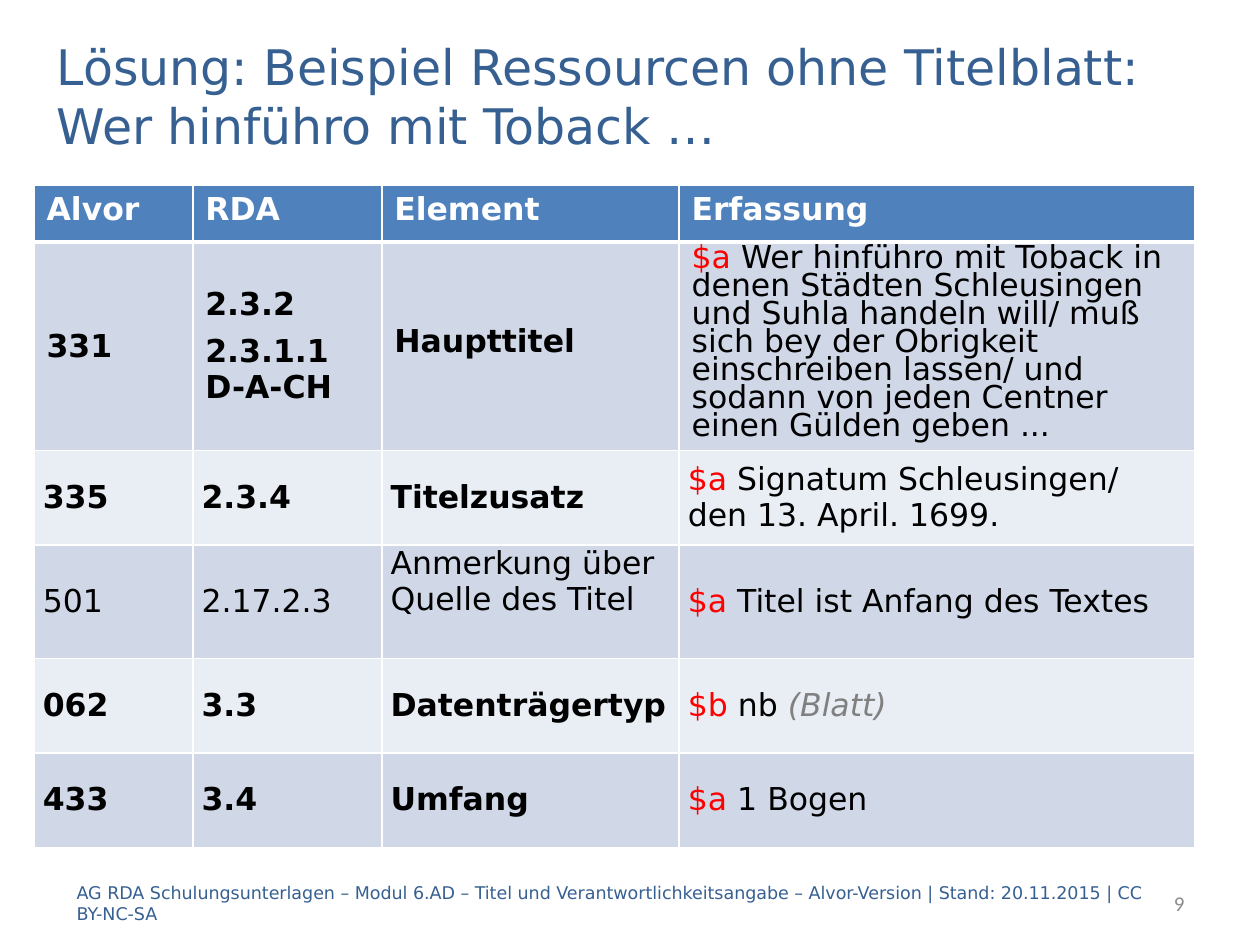
from dataclasses import dataclass
from lxml import etree
from pptx import Presentation
from pptx.dml.color import RGBColor
from pptx.enum import text
from pptx.oxml import ns
from pptx.util import Inches, Pt


@dataclass(frozen=True)
class Theme:
    font: str = "DejaVu Sans"
    number_font: str = "Calibri"
    blue: str = "376092"
    header: str = "4F81BD"
    bands: tuple = ("D0D8E8", "E9EDF4")
    white: str = "FFFFFF"
    black: str = "000000"
    red: str = "FF0000"
    grey: str = "808080"
    number: str = "8C8C8C"
    title_size: int = 28
    table_size: int = 18
    footer_size: int = 10
    number_size: int = 12


THEME = Theme()
STYLES = {
    "header": (THEME.white, True, False),
    "bold": (THEME.black, True, False),
    "plain": (THEME.black, False, False),
    "code": (THEME.red, False, False),
    "note": (THEME.grey, False, True),
}

TITLE = "Lösung: Beispiel Ressourcen ohne Titelblatt: \nWer hinführo mit Toback …"
FOOTER = ("AG RDA Schulungsunterlagen – Modul 6.AD – Titel und Verantwortlichkeitsangabe"
          " – Alvor-Version | Stand: 20.11.2015 | CC BY-NC-SA")
PAGE = "9"
HEADINGS = ["Alvor", "RDA", "Element", "Erfassung"]
ENTRIES = [
    ("bold", ["331"], ["2.3.2", "2.3.1.1\nD-A-CH"], ["Haupttitel"],
     [("$a ", "code"),
      ("Wer hinführo mit Toback in denen Städten Schleusingen und Suhla handeln will/ "
       "muß sich bey der Obrigkeit einschreiben lassen/ und sodann von jeden Centner "
       "einen Gülden geben ...", "plain")]),
    ("bold", ["335"], ["2.3.4"], ["Titelzusatz"],
     [("$a ", "code"), ("Signatum Schleusingen/ den 13. April. 1699.", "plain")]),
    ("plain", ["501"], ["2.17.2.3"], ["Anmerkung über Quelle des Titel"],
     [("$a ", "code"), ("Titel ist Anfang des Textes", "plain")]),
    ("bold", ["062"], ["3.3"], ["Datenträgertyp"],
     [("$b ", "code"), ("nb ", "plain"), ("(Blatt)", "note")]),
    ("bold", ["433"], ["3.4"], ["Umfang"],
     [("$a ", "code"), ("1 Bogen", "plain")]),
]
COLUMN_WIDTHS = [1.26, 1.5, 2.36, 4.09]
ROW_HEIGHTS = [0.45, 1.65, 0.75, 0.9, 0.75, 0.75]


def add_run(paragraph, words, size, color, bold=False, italic=False, font=THEME.font):
    for index, line in enumerate(words.split("\n")):
        if index:
            paragraph.add_line_break()
        run = paragraph.add_run()
        run.text = line
        run.font.name = font
        run.font.size = Pt(size)
        run.font.bold = bold
        run.font.italic = italic
        run.font.color.rgb = RGBColor.from_string(color)


def place(shape, left, top, width, height):
    shape.left, shape.top = Inches(left), Inches(top)
    shape.width, shape.height = Inches(width), Inches(height)


def prepare_frame(frame):
    frame.word_wrap = True
    frame.auto_size = text.MSO_AUTO_SIZE.NONE
    frame.vertical_anchor = text.MSO_ANCHOR.MIDDLE
    return frame.paragraphs[0]


def add_label(slide, box, words, size, color, font=THEME.font, align=text.PP_ALIGN.LEFT):
    shape = slide.shapes.add_textbox(*map(Inches, box))
    paragraph = prepare_frame(shape.text_frame)
    paragraph.alignment = align
    add_run(paragraph, words, size, color, font=font)


def format_cell(cell, fill, margins, anchor, bottom_width=1):
    properties = cell._tc.get_or_add_tcPr()
    for side, width in (("lnL", 1), ("lnR", 1), ("lnT", 1), ("lnB", bottom_width)):
        line = etree.SubElement(properties, ns.qn(f"a:{side}"), w=str(Pt(width)))
        solid = etree.SubElement(line, ns.qn("a:solidFill"))
        etree.SubElement(solid, ns.qn("a:srgbClr"), val=THEME.white)
    cell.fill.solid()
    cell.fill.fore_color.rgb = RGBColor.from_string(fill)
    cell.margin_left = cell.margin_right = Inches(margins[0])
    cell.margin_top = cell.margin_bottom = Inches(margins[1])
    cell.vertical_anchor = anchor


def fill_cell(cell, paragraphs, spacing=0, line_spacing=None):
    frame = cell.text_frame
    for index, runs in enumerate(paragraphs):
        paragraph = frame.add_paragraph() if index else frame.paragraphs[0]
        is_lead = index == 0 and len(paragraphs) > 1
        paragraph.space_before = paragraph.space_after = Pt(0 if is_lead else spacing)
        if line_spacing:
            paragraph.line_spacing = Pt(line_spacing)
        for words, style in runs:
            add_run(paragraph, words, THEME.table_size, *STYLES[style])


def add_entries(slide):
    table = slide.shapes.add_table(
        len(ROW_HEIGHTS), len(COLUMN_WIDTHS), Inches(0.27), Inches(1.47),
        Inches(sum(COLUMN_WIDTHS)), Inches(sum(ROW_HEIGHTS))).table
    for column, width in zip(table.columns, COLUMN_WIDTHS):
        column.width = Inches(width)
    for row, height in zip(table.rows, ROW_HEIGHTS):
        row.height = Inches(height)

    wide, narrow = (0.1, 0.05), (0.07, 0)
    for cell, heading in zip(table.rows[0].cells, HEADINGS):
        format_cell(cell, THEME.header, wide, text.MSO_ANCHOR.TOP, bottom_width=3)
        fill_cell(cell, [[(heading, "header")]])

    for row_index, (style, *labels, record) in enumerate(ENTRIES):
        is_main = row_index == 0
        contents = [[[(words, style)] for words in label] for label in labels] + [[record]]
        for column_index, paragraphs in enumerate(contents):
            cell = table.cell(row_index + 1, column_index)
            at_top = style == "plain" and column_index == 2
            format_cell(cell, THEME.bands[row_index % 2], wide if is_main else narrow,
                        text.MSO_ANCHOR.TOP if at_top else text.MSO_ANCHOR.MIDDLE)
            fill_cell(cell, paragraphs, 6 if is_main else 3,
                      16 if is_main and column_index >= 2 else None)


def main():
    presentation = Presentation()
    presentation.slide_width, presentation.slide_height = Inches(10), Inches(7.5)
    slide = presentation.slides.add_slide(presentation.slide_layouts[5])

    title = slide.shapes.title
    place(title, 0.35, 0.36, 9.45, 0.79)
    paragraph = prepare_frame(title.text_frame)
    paragraph.alignment = text.PP_ALIGN.LEFT
    add_run(paragraph, TITLE, THEME.title_size, THEME.blue)

    add_entries(slide)
    add_label(slide, (0.51, 6.97, 8.66, 0.4), FOOTER, THEME.footer_size, THEME.blue)
    add_label(slide, (7.91, 6.97, 1.59, 0.4), PAGE, THEME.number_size, THEME.number,
              THEME.number_font, text.PP_ALIGN.RIGHT)
    presentation.save("out.pptx")


if __name__ == "__main__":
    main()
